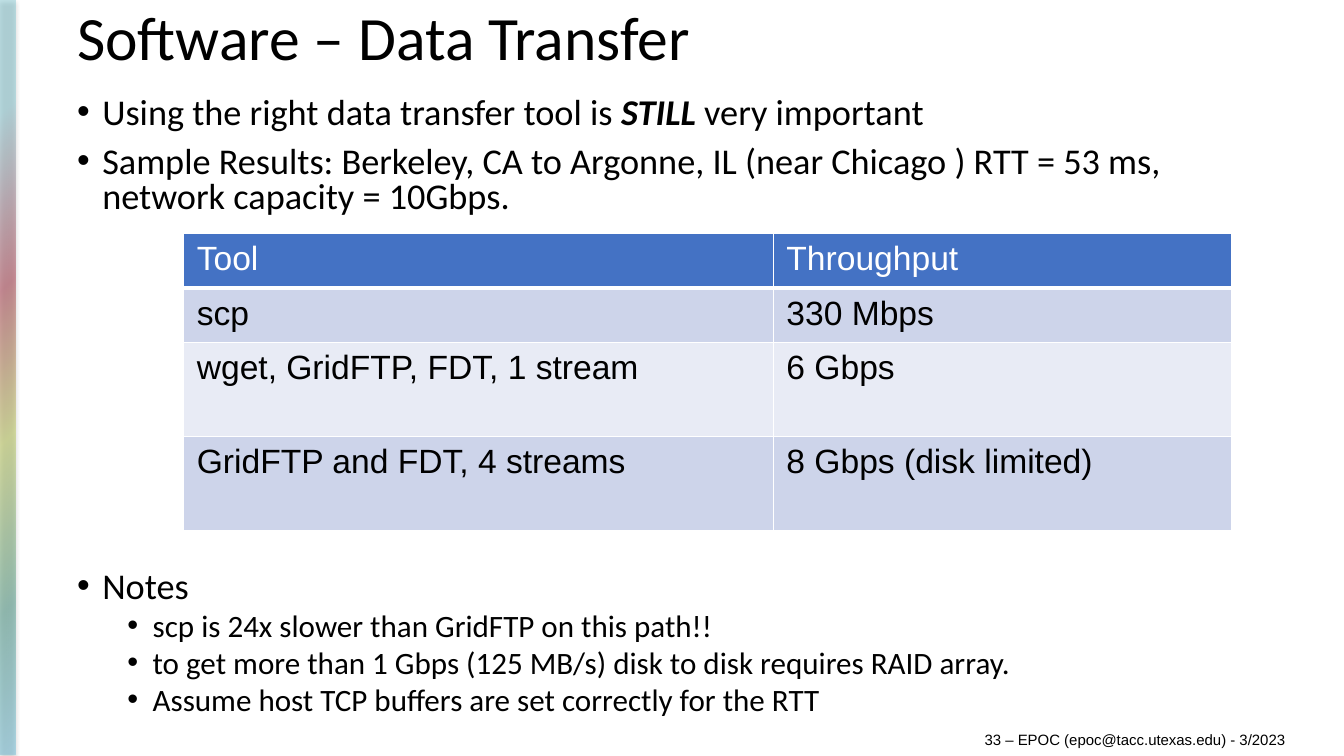
"""Build the slide comparing data transfer tools."""
import pptx
import pptx.dml.color
import pptx.enum.shapes
import pptx.enum.text
import pptx.oxml
import pptx.oxml.ns
import pptx.util
import lxml.etree

Pt = pptx.util.Pt
DRAWING = 'xmlns:a="http://schemas.openxmlformats.org/drawingml/2006/main"'


def color(hex_string):
    return pptx.dml.color.RGBColor.from_string(hex_string)


def add_xml(parent, markup):
    head, tail = markup.split(" ", 1)
    parent.append(pptx.oxml.parse_xml(f"{head} {DRAWING} {tail}"))


deck = pptx.Presentation()
deck.slide_width, deck.slide_height = Pt(960), Pt(540)
page = deck.slides.add_slide(deck.slide_layouts[6])

strip = page.shapes.add_shape(
    pptx.enum.shapes.MSO_SHAPE.RECTANGLE, 0, 0, Pt(10.8), Pt(539.3))
strip.line.fill.background()
strip.shadow.inherit = False
strip.fill.gradient()
gradient = strip.fill._xPr.find(pptx.oxml.ns.qn("a:gradFill"))
for child in list(gradient):
    gradient.remove(child)
stops = [(0, "6CBFDC"), (20, "459582"), (42, "BAC851"),
         (62, "A42E40"), (85, "84C8D3"), (100, "84C8D3")]
stop_markup = "".join(
    f'<a:gs pos="{position * 1000}"><a:srgbClr val="{shade}">'
    '<a:alpha val="49000"/></a:srgbClr></a:gs>'
    for position, shade in stops)
add_xml(gradient, f"<a:gsLst >{stop_markup}</a:gsLst>")
add_xml(gradient, '<a:path path="circle"><a:fillToRect l="100000" t="100000"/></a:path>')
effects = strip._element.spPr.find(pptx.oxml.ns.qn("a:effectLst"))
add_xml(effects, f'<a:outerShdw blurRad="{Pt(3.1)}" dist="{Pt(1.8)}" dir="5400000" '
        'rotWithShape="0"><a:srgbClr val="000000"><a:alpha val="34000"/>'
        '</a:srgbClr></a:outerShdw>')

top_bullets = [
    (0, ["Using the right data transfer tool is ", "STILL", " very important"]),
    (0, ["Sample Results: Berkeley, CA to Argonne, IL (near Chicago ) RTT = 53 ms, "
         "network capacity = 10Gbps."]),
]
note_bullets = [
    (0, ["Notes"]),
    (1, ["scp is 24x slower than GridFTP on this path!!"]),
    (1, ["to get more than 1 Gbps (125 MB/s) disk to disk requires RAID array."]),
    (1, ["Assume host TCP buffers are set correctly for the RTT"]),
]
for top, height, bullets in [(66.2, 95, top_bullets), (405, 124, note_bullets)]:
    box = page.shapes.add_textbox(Pt(48), Pt(top), Pt(864), Pt(height))
    frame = box.text_frame
    frame.word_wrap = True
    for index, (level, pieces) in enumerate(bullets):
        para = frame.paragraphs[0] if index == 0 else frame.add_paragraph()
        para.level = level
        para.line_spacing = 0.8
        if index:
            para.space_before = Pt(5 if level else 10)
        properties = para._p.get_or_add_pPr()
        properties.set("marL", str(Pt(54 if level else 18)))
        properties.set("indent", str(-Pt(18)))
        add_xml(properties, '<a:buClr ><a:srgbClr val="000000"/></a:buClr>')
        add_xml(properties, '<a:buFont typeface="Arial"/>')
        add_xml(properties, '<a:buChar char="•"/>')
        for piece in pieces:
            span = para.add_run()
            span.text = piece
            span.font.name = "Calibri"
            span.font.size = Pt(22.2 if level else 25.9)
            span.font.color.rgb = color("000000")
            span.font.bold = span.font.italic = piece == "STILL"

labels = [
    ("Software – Data Transfer", (48, 0, 864, 57.6), "Calibri", 44, 0.9),
    ("33 – EPOC (epoc@tacc.utexas.edu) - 3/2023", (696.2, 521.3, 254, 14.4), "Arial", 10.7, 1),
]
for text, place, font_name, size, spacing in labels:
    box = page.shapes.add_textbox(*map(Pt, place))
    frame = box.text_frame
    frame.word_wrap = True
    frame.vertical_anchor = pptx.enum.text.MSO_ANCHOR.MIDDLE
    frame.text = text
    para = frame.paragraphs[0]
    para.line_spacing = spacing
    span = para.runs[0]
    span.font.name = font_name
    span.font.size = Pt(size)
    span.font.color.rgb = color("000000")

results = [
    ("Tool", "Throughput"),
    ("scp", "330 Mbps"),
    ("wget, GridFTP, FDT, 1 stream", "6 Gbps"),
    ("GridFTP and FDT, 4 streams", "8 Gbps (disk limited)"),
]
row_heights = [38.9, 38.9, 67.2, 67.2]
row_fills = ["4472C4", "CDD4EA", "E8EBF5", "CDD4EA"]
table = page.shapes.add_table(
    4, 2, Pt(131.2), Pt(166.6), Pt(748.8), Pt(sum(row_heights))).table
for column, width in zip(table.columns, [421.2, 327.6]):
    column.width = Pt(width)
for row_index, texts in enumerate(results):
    table.rows[row_index].height = Pt(row_heights[row_index])
    for column_index, text in enumerate(texts):
        cell = table.cell(row_index, column_index)
        cell.margin_left = cell.margin_right = Pt(9.4)
        cell.margin_top = cell.margin_bottom = Pt(5)
        cell.text_frame.text = text
        span = cell.text_frame.paragraphs[0].runs[0]
        span.font.name = "Arial"
        span.font.size = Pt(24)
        span.font.bold = False
        span.font.color.rgb = color("000000" if row_index else "FFFFFF")
        properties = cell._tc.get_or_add_tcPr()
        for side in "LRTB":
            heavy = (row_index, side) in [(0, "B"), (1, "T")]
            add_xml(properties, f'<a:ln{side} w="{Pt(3 if heavy else 1)}"><a:solidFill>'
                    f'<a:srgbClr val="FFFFFF"/></a:solidFill></a:ln{side}>')
        cell.fill.solid()
        cell.fill.fore_color.rgb = color(row_fills[row_index])

deck.save("out.pptx")
